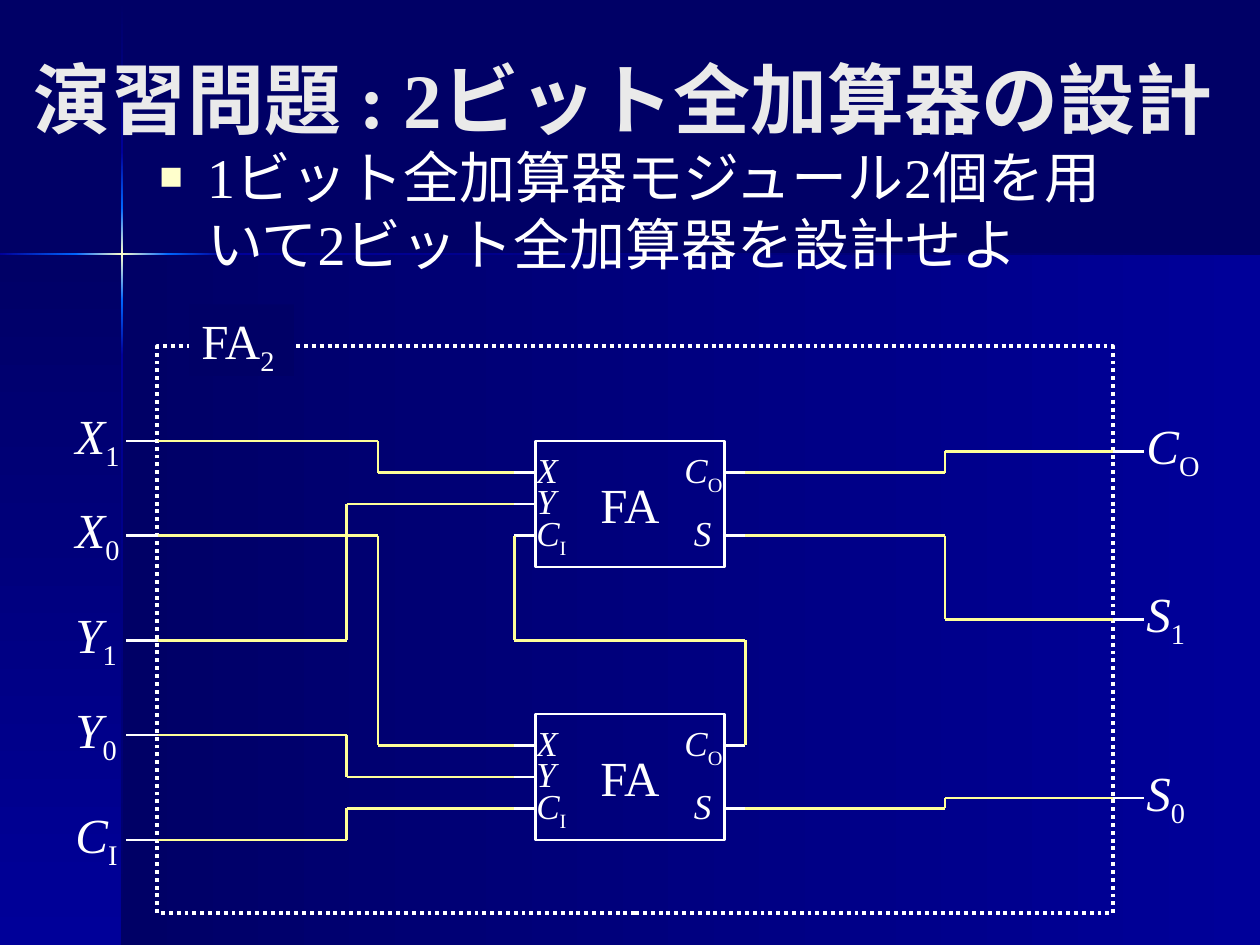
from pptx import Presentation
from pptx.dml.color import RGBColor
from pptx.enum.dml import MSO_LINE
from pptx.enum.shapes import MSO_CONNECTOR, MSO_SHAPE
from pptx.enum.text import MSO_ANCHOR, MSO_AUTO_SIZE, PP_ALIGN
from pptx.oxml.ns import qn
from pptx.util import Inches, Pt
from lxml.etree import SubElement

FONT = "Times New Roman"
WHITE, WIRE, NAVY, BLUE = "FFFFFF", "FFFF99", "000066", "000099"
GLOW, CREAM = "0066FF", "FFFFCC"
COLS, ROWS = 120, 90


def rgb(value):
    return RGBColor.from_string(value)


def grid(*units):
    return [Inches(u * 10 / COLS) for u in units]


def add_text(s, box, parts, size, color=WHITE, bold=False, wrap=False, before=True):
    tb = s.shapes.add_textbox(*grid(*box))
    write(tb, parts, size, color, bold, wrap, before)
    return tb


def write(sp, parts, size, color=WHITE, bold=False, wrap=False, before=True):
    tf = sp.text_frame
    tf.word_wrap = wrap
    p = tf.paragraphs[0]
    p.alignment = PP_ALIGN.LEFT
    if before:
        spacing = SubElement(p._p.get_or_add_pPr(), qn("a:spcBef"))
        SubElement(spacing, qn("a:spcPct")).set("val", "20000")
    for text, style in parts:
        r = p.add_run()
        r.text = text
        f = r.font
        f.name, f.size, f.bold = FONT, Pt(size), bold
        f.italic = style == "italic"
        f.color.rgb = rgb(color)
        if style == "sub":
            r._r.get_or_add_rPr().set("baseline", "-25000")


def add_rect(s, box, fill=None, line=None, width=1.5):
    sp = s.shapes.add_shape(MSO_SHAPE.RECTANGLE, *grid(*box))
    sp.shadow.inherit = False
    if fill:
        sp.fill.solid()
        sp.fill.fore_color.rgb = rgb(fill)
    else:
        sp.fill.background()
    if line:
        sp.line.color.rgb = rgb(line)
        sp.line.width = Pt(width)
    else:
        sp.line.fill.background()
    return sp


def add_gradient(s, box, colors, vertical):
    sp = add_rect(s, box)
    sp.fill.gradient()
    sp.fill.gradient_angle = 270 if vertical else 0
    stops = sp._element.spPr.find(qn("a:gradFill")).find(qn("a:gsLst"))
    for stop in list(stops):
        stops.remove(stop)
    for i, color in enumerate(colors):
        stop = SubElement(stops, qn("a:gs"))
        stop.set("pos", str(100000 * i // (len(colors) - 1)))
        SubElement(stop, qn("a:srgbClr")).set("val", color)


def add_line(s, start, end, color=WHITE):
    c = s.shapes.add_connector(MSO_CONNECTOR.STRAIGHT, *grid(*start, *end))
    c.line.color.rgb = rgb(color)
    c.line.width = Pt(1.5)
    SubElement(c._element.spPr, qn("a:effectLst"))
    return c


def symbol(letter, sub=""):
    return [(letter, "italic")] + ([(sub, "sub")] if sub else [])


def backdrop(s, box):
    x, y, w, h = box
    cx, cy, thin = x + 11.6, y + 24.2, 0.24
    right, bottom = x + w, y + h
    add_gradient(s, (cx, cy, right - cx, bottom - cy), [NAVY, BLUE], False)
    add_gradient(s, (x, cy, cx - x, bottom - cy), [NAVY, BLUE], True)
    rays = [(y, 14.5, [NAVY, BLUE]), (y + 33.8, bottom - y - 33.8, [BLUE, NAVY]),
            (y + 28.6, 5.2, [GLOW, BLUE]), (y + 14.5, 5.3, [BLUE, GLOW]),
            (y + 19.8, 8.8, [GLOW, CREAM, GLOW])]
    for top, length, colors in rays:
        add_gradient(s, (cx - thin / 2, top, thin, length), colors, True)
    rays = [(x + 21.2, right - x - 21.2, [BLUE, NAVY]), (x, 7.3, [BLUE, GLOW]),
            (x + 16, 5.2, [GLOW, BLUE]), (x + 7.2, 8.8, [GLOW, CREAM, GLOW])]
    for left, length, colors in rays:
        add_gradient(s, (left, cy - thin / 2, length, thin), colors, False)


def heading(s, box):
    tb = add_text(s, box, [("演習問題 : 2ビット全加算器の設計", "")], 44, "EAEAEA",
                  bold=True, wrap=True, before=False)
    tb.text_frame.vertical_anchor = MSO_ANCHOR.MIDDLE


def task(s, box):
    tb = add_text(s, box, [("1ビット全加算器モジュール2個を用いて2ビット全加算器を設計せよ", "")],
                  32, wrap=True)
    pPr = tb.text_frame.paragraphs[0]._p.get_or_add_pPr()
    pPr.set("marL", str(Inches(0.38)))
    pPr.set("indent", str(-Inches(0.38)))
    SubElement(SubElement(pPr, qn("a:buClr")), qn("a:srgbClr")).set("val", CREAM)
    SubElement(pPr, qn("a:buSzPct")).set("val", "70000")
    SubElement(pPr, qn("a:buFont")).set("typeface", FONT)
    SubElement(pPr, qn("a:buChar")).set("char", "■")


def full_adder(s, box):
    x, y, w, h = box
    sp = add_rect(s, box, line=WHITE)
    write(sp, [("FA", "")], 28)
    sp.text_frame.vertical_anchor = MSO_ANCHOR.MIDDLE
    sp.text_frame.paragraphs[0].alignment = PP_ALIGN.CENTER
    inputs = [("X", "", 5.3), ("Y", "", 5.2), ("C", "I", 6)]
    for i, (letter, sub, width) in enumerate(inputs, 1):
        row = y + i * h / 4
        add_text(s, (x - 1.1, row - 2.9, width, 5.2), symbol(letter, sub), 20)
        stub = add_line(s, (x - 2, row), (x, row))
        if i == 2:
            stub.end_connect(sp, 1)
    for i, letter, sub, left, width in [(1, "C", "O", 13, 7), (3, "S", "", 13.9, 5)]:
        row = y + i * h / 4
        add_text(s, (x + left, row - 2.9, width, 5.2), symbol(letter, sub), 20)
        add_line(s, (x + w, row), (x + w + 2, row))


def two_bit_adder(s, box):
    x, y, w, h = box
    frame = add_rect(s, box, line=WHITE, width=2.25)
    frame.line.dash_style = MSO_LINE.ROUND_DOT
    tag = add_rect(s, (x + 3, y - 4, 10, 6.8), fill=NAVY)
    write(tag, [("FA", ""), ("2", "sub")], 28)
    tag.text_frame.vertical_anchor = MSO_ANCHOR.TOP
    tag.text_frame.auto_size = MSO_AUTO_SIZE.SHAPE_TO_FIT_TEXT

    inputs = [("X", "1", 9, 6.8), ("X", "0", 18, 6.8), ("Y", "1", 28, 6.6),
              ("Y", "0", 37, 6.6), ("C", "I", 47, 6.6)]
    outputs = [("C", "O", 10, 7.8), ("S", "1", 26, 6.4), ("S", "0", 43, 6.4)]
    for ports, label, stub in [(inputs, x - 9, x - 3), (outputs, x + w + 2, x + w)]:
        for letter, sub, row, width in ports:
            add_text(s, (label, y + row - 4, width, 6.8), symbol(letter, sub), 28)
            add_line(s, (stub, y + row), (stub + 3, y + row))

    for top in (9, 35):
        full_adder(s, (x + 36, y + top, 18, 12))

    entry, leave = 34, 56
    wires = [[(0, a), (bend, a), (bend, b), (entry, b)]
             for a, bend, b in [(9, 21, 12), (18, 21, 38), (28, 18, 15),
                                (37, 18, 41), (47, 18, 44)]]
    wires += [[(leave, a), (75, a), (75, b), (w, b)]
              for a, b in [(12, 10), (18, 26), (44, 43)]]
    wires.append([(entry, 18), (entry, 28), (leave, 28), (leave, 38)])
    for wire in wires:
        points = [(x + a, y + b) for a, b in wire]
        for start, end in zip(points, points[1:]):
            add_line(s, start, end, WIRE)


def main():
    prs = Presentation()
    prs.slide_width, prs.slide_height = grid(COLS, ROWS)
    s = prs.slides.add_slide(prs.slide_layouts[6])
    s.background.fill.solid()
    s.background.fill.fore_color.rgb = rgb(NAVY)
    backdrop(s, (0, 0, COLS, ROWS))
    heading(s, (2, 3.6, 115, 11.4))
    task(s, (14, 13, 97, 15))
    two_bit_adder(s, (15, 33, 91, 54))
    prs.save("out.pptx")


if __name__ == "__main__":
    main()
